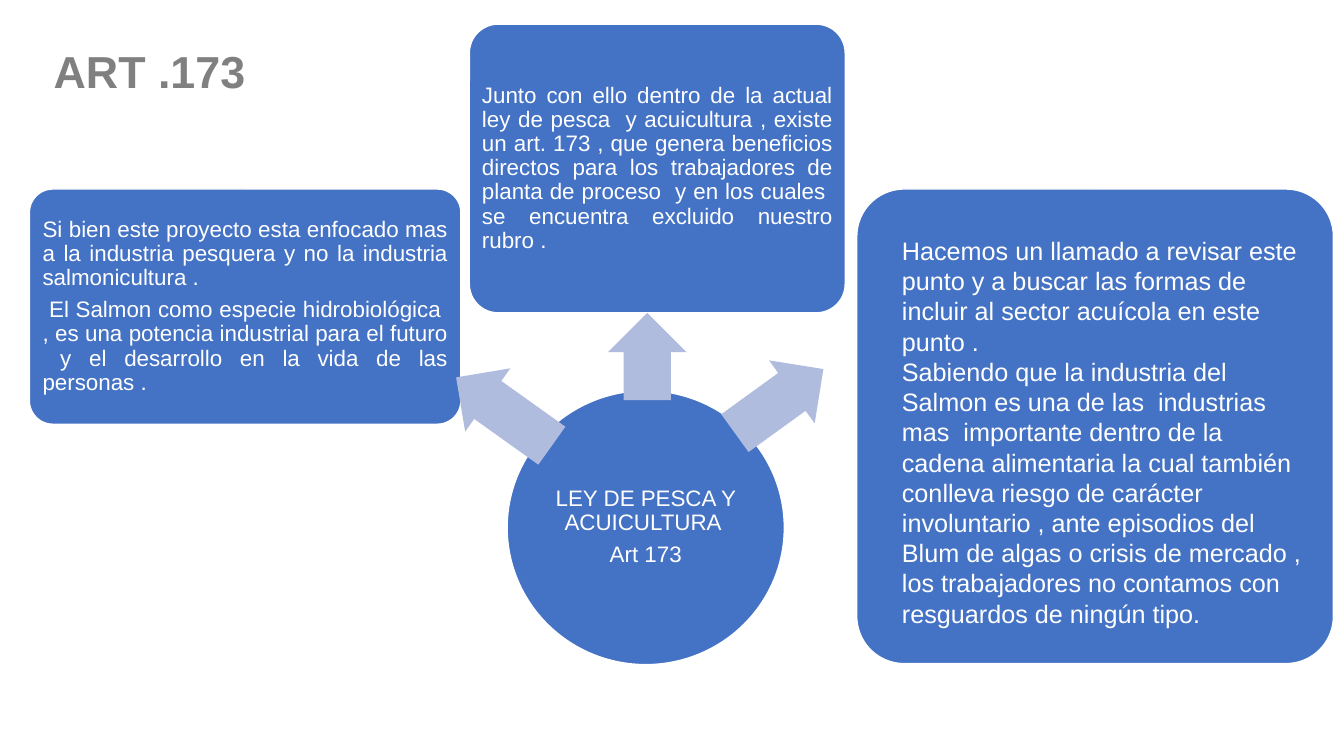
from pptx import Presentation
from pptx.dml.color import RGBColor
from pptx.enum.shapes import MSO_SHAPE
from pptx.enum.text import MSO_ANCHOR, PP_ALIGN
from pptx.util import Emu, Pt

EMU_PER_PX = 9525
CORNER = 0.1
CARD_PADDING = 12
COLORS = {"card": "4472C4", "arrow": "B0BCDE", "title": "808080", "white": "FFFFFF"}

LAW = ["LEY DE PESCA Y ACUICULTURA ", "Art 173"]
SALMON = [
    "Si bien este proyecto esta enfocado mas a la industria pesquera y no la industria salmonicultura .",
    " El Salmon como especie hidrobiológica  , es una potencia industrial para el futuro  y el desarrollo "
    "en la vida de las personas .",
]
BENEFITS = [
    "Junto con ello dentro de la actual ley de pesca  y acuicultura , existe un art. 173 , que genera "
    "beneficios directos para los trabajadores de planta de proceso  y en los cuales  se encuentra "
    "excluido nuestro rubro ."
]
APPEAL = [
    "Hacemos un llamado a revisar este punto y a buscar las formas de incluir al sector acuícola en este punto .",
    "Sabiendo que la industria del Salmon es una de las  industrias mas  importante dentro de la  cadena "
    "alimentaria la cual también conlleva riesgo de carácter involuntario , ante episodios del Blum de "
    "algas o crisis de mercado , los trabajadores no contamos con resguardos de ningún tipo.",
]
ARROWS = [
    ((424, 355, 112, 74), 35.5),
    ((575, 302, 83, 75), 90),
    ((690, 345, 104, 74), 144.1),
]


def px(length):
    return Emu(length * EMU_PER_PX)


def box(*lengths):
    return [px(length) for length in lengths]


def color(name):
    return RGBColor.from_string(COLORS[name])


def write(frame, paragraphs, size=16, ink="white", bold=False, align=PP_ALIGN.LEFT,
          anchor=MSO_ANCHOR.MIDDLE, line_spacing=1.0, after=0, inset=(10, 5)):
    frame.word_wrap = True
    frame.vertical_anchor = anchor
    frame.margin_left = frame.margin_right = px(inset[0])
    frame.margin_top = frame.margin_bottom = px(inset[1])
    for index, words in enumerate(paragraphs):
        paragraph = frame.add_paragraph() if index else frame.paragraphs[0]
        paragraph.alignment = align
        paragraph.line_spacing = line_spacing
        paragraph.space_before = Pt(0)
        paragraph.space_after = Pt(after)
        run = paragraph.add_run()
        run.text = words
        run.font.name = "Arial"
        run.font.size = Pt(size)
        run.font.bold = bold
        run.font.color.rgb = color(ink)


def add_title(slide, words, place):
    title = slide.shapes.title
    title.left, title.top, title.width, title.height = box(*place)
    write(title.text_frame, [words], size=32, ink="title", bold=True)


def add_filled(slide, preset, place, fill):
    shape = slide.shapes.add_shape(preset, *box(*place))
    shape.shadow.inherit = False
    shape.fill.solid()
    shape.fill.fore_color.rgb = color(fill)
    shape.line.fill.background()
    return shape


def add_outlined(slide, preset, place, paragraphs, align, inset):
    shape = add_filled(slide, preset, place, "card")
    shape.line.color.rgb = color("white")
    shape.line.width = Pt(1)
    write(shape.text_frame, paragraphs, align=align, line_spacing=0.9, after=5.6,
          inset=(inset, inset))
    return shape


def add_card(slide, place, paragraphs=()):
    corner_inset = round(0.29 * CORNER * min(place[2:]))
    inset = max(CARD_PADDING - corner_inset, 0)
    card = add_outlined(slide, MSO_SHAPE.ROUNDED_RECTANGLE, place, paragraphs,
                        PP_ALIGN.JUSTIFY, inset)
    card.adjustments[0] = CORNER


def add_arrow(slide, place, rotation):
    arrow = add_filled(slide, MSO_SHAPE.LEFT_ARROW, place, "arrow")
    arrow.adjustments[0] = 0.6
    arrow.adjustments[1] = 0.5
    arrow.rotation = rotation


def add_text(slide, place, paragraphs, **text_format):
    write(slide.shapes.add_textbox(*box(*place)).text_frame, paragraphs, **text_format)


def main():
    deck = Presentation()
    deck.slide_width, deck.slide_height = box(1280, 720)
    slide = deck.slides.add_slide(deck.slide_layouts.get_by_name("Title Only"))
    add_title(slide, "ART .173", (41, 37, 372, 61))
    add_outlined(slide, MSO_SHAPE.OVAL, (483, 372, 264, 261), LAW, PP_ALIGN.CENTER, 0)
    add_card(slide, (28, 180, 411, 224), SALMON)
    add_card(slide, (447, 23, 358, 275), BENEFITS)
    add_card(slide, (816, 180, 454, 452))
    for place, rotation in ARROWS:
        add_arrow(slide, place, rotation)
    add_text(slide, (849, 219, 402, 388), APPEAL, size=18, anchor=MSO_ANCHOR.TOP)
    deck.save("out.pptx")


if __name__ == "__main__":
    main()
